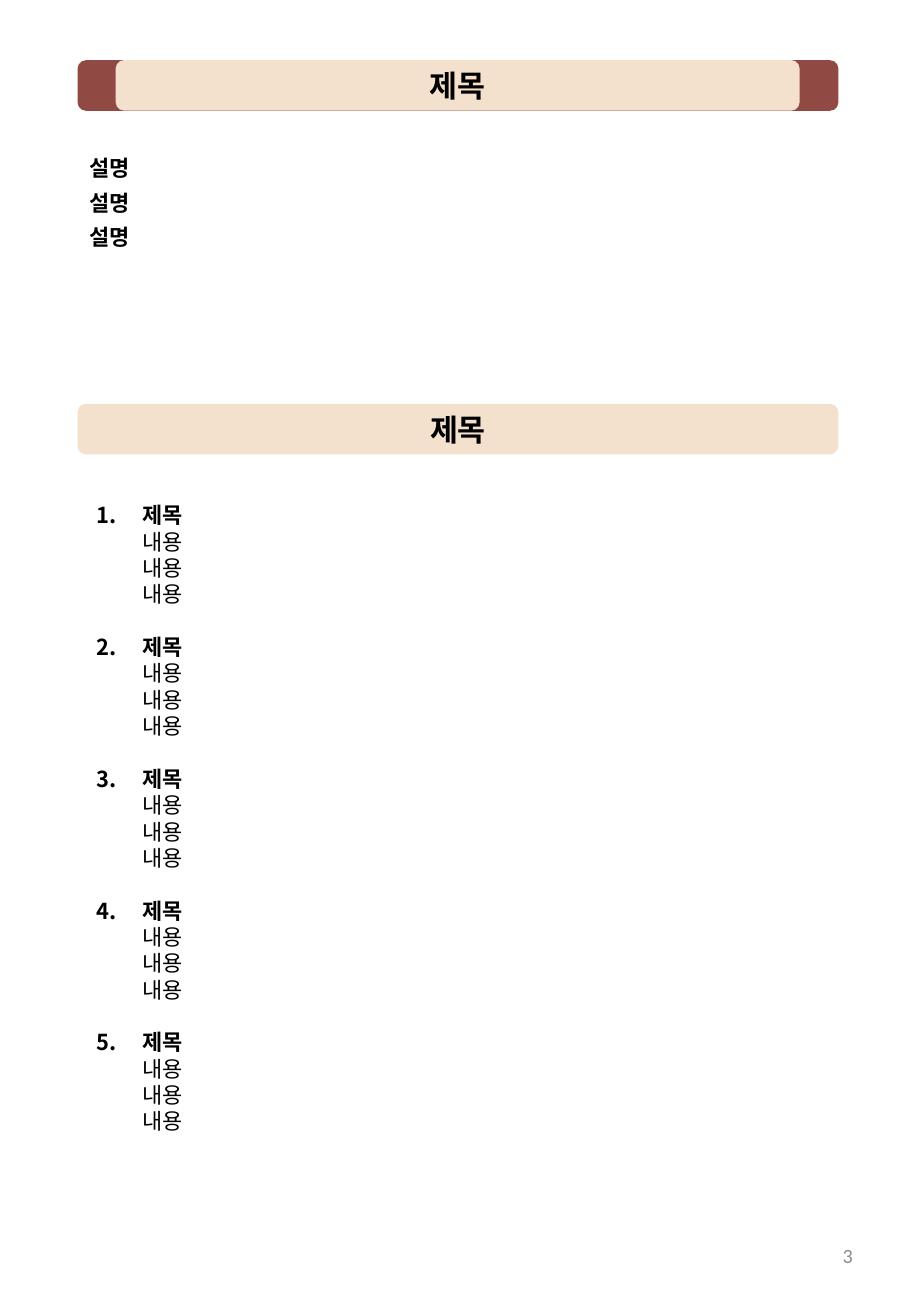
"""Build a portrait handout page with two title banners and a numbered list."""
from lxml.etree import SubElement
from pptx import Presentation
from pptx.dml.color import RGBColor
from pptx.enum.shapes import MSO_SHAPE
from pptx.enum.text import MSO_ANCHOR, PP_ALIGN
from pptx.oxml.ns import qn
from pptx.util import Pt

BLACK = RGBColor(0x00, 0x00, 0x00)
GREY = RGBColor(0x8C, 0x8C, 0x8C)
MAROON = RGBColor(0x90, 0x49, 0x43)
CREAM = RGBColor(0xF3, 0xE1, 0xCE)

TITLE = {"name": "Arial", "size": Pt(18), "bold": True}
STRONG = {"name": "Arial", "size": Pt(13), "bold": True}
BODY = {"name": "Arial", "size": Pt(13), "bold": False}
NUMBER = {"name": "Calibri", "size": Pt(12), "bold": False}

LEFT, BANNER_WIDTH, BANNER_HEIGHT = 46, 451, 30
LIST_INDENT = 27
ITEM_GAP = 15.6


class PageBuilder:
    def __init__(self, slide):
        self.slide = slide

    def add_span(self, para, text, values, color=BLACK):
        span = para.add_run()
        span.text = text
        for key, value in values.items():
            setattr(span.font, key, value)
        span.font.color.rgb = color

    def banner(self, left, top, width, fill, title=None):
        box = self.slide.shapes.add_shape(
            MSO_SHAPE.ROUNDED_RECTANGLE, Pt(left), Pt(top), Pt(width), Pt(BANNER_HEIGHT))
        box.shadow.inherit = False
        box.fill.solid()
        box.fill.fore_color.rgb = fill
        box.line.fill.background()
        if title:
            frame = box.text_frame
            frame.vertical_anchor = MSO_ANCHOR.MIDDLE
            para = frame.paragraphs[0]
            para.alignment = PP_ALIGN.CENTER
            self.add_span(para, title, TITLE)

    def text_frame(self, left, top, width, height):
        box = self.slide.shapes.add_textbox(Pt(left), Pt(top), Pt(width), Pt(height))
        box.text_frame.word_wrap = True
        return box.text_frame

    def paragraphs(self, frame, count):
        return [frame.paragraphs[0]] + [frame.add_paragraph() for _ in range(count - 1)]

    def description(self, left, top, width, height, lines):
        frame = self.text_frame(left, top, width, height)
        for para, line in zip(self.paragraphs(frame, len(lines)), lines):
            para.line_spacing = 1.3
            self.add_span(para, line, STRONG)

    def numbered_list(self, left, top, width, height, items):
        frame = self.text_frame(left, top, width, height)
        for index, para in enumerate(self.paragraphs(frame, len(items))):
            heading, *details = items[index]
            if index:
                para.space_before = Pt(ITEM_GAP)
            properties = para._p.get_or_add_pPr()
            properties.set("marL", str(Pt(LIST_INDENT)))
            properties.set("indent", str(-Pt(LIST_INDENT)))
            SubElement(properties, qn("a:buFont"), typeface="Arial")
            SubElement(properties, qn("a:buAutoNum"), type="arabicPeriod")
            self.add_span(para, heading, STRONG)
            for detail in details:
                para.add_line_break()
                self.add_span(para, detail, BODY)
            for line_break in para._p.findall(qn("a:br")):
                SubElement(line_break, qn("a:rPr"), sz="1300")

    def page_number(self, left, top, width, height, number):
        frame = self.text_frame(left, top, width, height)
        frame.vertical_anchor = MSO_ANCHOR.MIDDLE
        para = frame.paragraphs[0]
        para.alignment = PP_ALIGN.RIGHT
        self.add_span(para, number, NUMBER, GREY)


def main():
    deck = Presentation()
    deck.slide_width, deck.slide_height = Pt(540), Pt(779.76)
    page = PageBuilder(deck.slides.add_slide(deck.slide_layouts[6]))

    page.description(LEFT, 83.5, 428.4, 66.2, ["설명"] * 3)
    page.banner(LEFT, 35.7, BANNER_WIDTH, MAROON)
    page.banner(68.6, 35.6, 405.4, CREAM, "제목")
    page.banner(LEFT, 239.3, BANNER_WIDTH, CREAM, "제목")
    page.numbered_list(50.4, 293.8, 441.4, 385.2, [["제목"] + ["내용"] * 3] * 5)
    page.page_number(386.6, 722.9, 126, 41.8, "3")

    deck.save("out.pptx")


if __name__ == "__main__":
    main()
